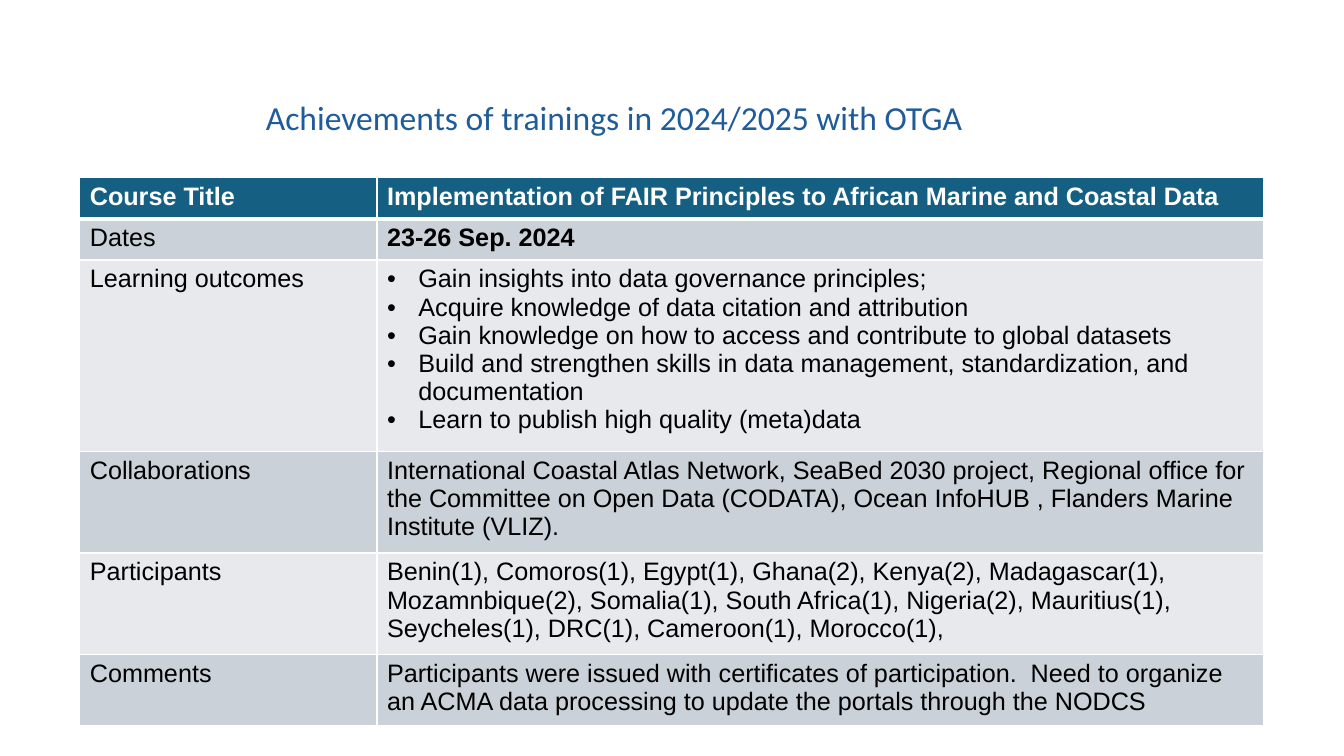
import dataclasses

import pptx
import pptx.dml.color
import pptx.oxml
import pptx.oxml.ns
import pptx.util
from pptx.util import Cm


@dataclasses.dataclass(frozen=True)
class Theme:
    heading: str = "1F5C99"
    header_fill: str = "156082"
    header_text: str = "FFFFFF"
    body_text: str = "000000"
    bands: tuple = ("E7E9EC", "CAD1D8")
    border: str = "FFFFFF"
    heading_font: str = "Calibri"
    table_font: str = "Arial"
    heading_size: int = 24
    table_size: int = 18
    thin: int = 1
    thick: int = 3


THEME = Theme()
HEADING = "Achievements of trainings in 2024/2025 with OTGA"
OUTCOMES = [
    "Gain insights into data governance principles;",
    "Acquire knowledge of data citation and attribution",
    "Gain knowledge on how to access and contribute to global datasets",
    "Build and strengthen skills in data management, standardization, and documentation",
    "Learn to publish high quality (meta)data",
]
COURSE = [
    ("Course Title", "Implementation of FAIR Principles to African Marine and Coastal Data", 1.04),
    ("Dates", "23-26 Sep. 2024", 1.04),
    ("Learning outcomes", OUTCOMES, 4.82),
    ("Collaborations",
     "International Coastal Atlas Network, SeaBed 2030 project, Regional office for "
     "the Committee on Open Data (CODATA), Ocean InfoHUB , Flanders Marine "
     "Institute (VLIZ).", 2.56),
    ("Participants",
     "Benin(1), Comoros(1), Egypt(1), Ghana(2), Kenya(2), Madagascar(1), "
     "Mozamnbique(2), Somalia(1), South Africa(1), Nigeria(2), Mauritius(1), "
     "Seycheles(1), DRC(1), Cameroon(1), Morocco(1),", 2.56),
    ("Comments",
     "Participants were issued with certificates of participation.  Need to organize "
     "an ACMA data processing to update the portals through the NODCS", 1.75),
]
COLUMN_WIDTHS = (7.49, 22.35)


def rgb(value):
    return pptx.dml.color.RGBColor.from_string(value)


def style_runs(paragraph, font_name, size, color, bold=False):
    for run in paragraph.runs:
        run.font.name = font_name
        run.font.size = pptx.util.Pt(size)
        run.font.color.rgb = rgb(color)
        run.font.bold = bold


def add_bullet(paragraph):
    properties = paragraph._p.get_or_add_pPr()
    properties.set("marL", str(Cm(0.79)))
    properties.set("indent", str(Cm(-0.79)))
    namespace = pptx.oxml.ns.nsdecls("a")
    properties.append(pptx.oxml.parse_xml(f'<a:buFont {namespace} typeface="{THEME.table_font}"/>'))
    properties.append(pptx.oxml.parse_xml(f'<a:buChar {namespace} char="•"/>'))


def set_borders(cell, top, bottom):
    properties = cell._tc.get_or_add_tcPr()
    widths = {"L": THEME.thin, "R": THEME.thin, "T": top, "B": bottom}
    for side, width in widths.items():
        properties.append(pptx.oxml.parse_xml(
            f'<a:ln{side} {pptx.oxml.ns.nsdecls("a")} w="{pptx.util.Pt(width)}">'
            f'<a:solidFill><a:srgbClr val="{THEME.border}"/></a:solidFill></a:ln{side}>'
        ))


def fill_cell(cell, content, row, bold):
    is_header = row == 0
    set_borders(
        cell,
        THEME.thick if row == 1 else THEME.thin,
        THEME.thick if is_header else THEME.thin,
    )
    cell.fill.solid()
    cell.fill.fore_color.rgb = rgb(THEME.header_fill if is_header else THEME.bands[row % 2])
    is_list = isinstance(content, list)
    cell.text_frame.text = "\n".join(content) if is_list else content
    for paragraph in cell.text_frame.paragraphs:
        if is_list:
            add_bullet(paragraph)
        color = THEME.header_text if is_header else THEME.body_text
        style_runs(paragraph, THEME.table_font, THEME.table_size, color, bold)


def add_heading(slide):
    heading = slide.shapes.add_textbox(Cm(6.45), Cm(2.31), Cm(20.93), Cm(1.27))
    heading.text_frame.word_wrap = True
    heading.text_frame.text = HEADING
    style_runs(heading.text_frame.paragraphs[0], THEME.heading_font, THEME.heading_size, THEME.heading)


def add_course_table(slide):
    total_height = sum(height for _, _, height in COURSE)
    course = slide.shapes.add_table(
        len(COURSE), len(COLUMN_WIDTHS),
        Cm(2.01), Cm(4.47), Cm(sum(COLUMN_WIDTHS)), Cm(total_height),
    ).table
    for column, width in zip(course.columns, COLUMN_WIDTHS):
        column.width = Cm(width)
    for row, (label, detail, height) in enumerate(COURSE):
        course.rows[row].height = Cm(height)
        fill_cell(course.cell(row, 0), label, row, bold=row == 0)
        fill_cell(course.cell(row, 1), detail, row, bold=row <= 1)


def main():
    presentation = pptx.Presentation()
    presentation.slide_width = Cm(33.87)
    presentation.slide_height = Cm(19.05)
    slide = presentation.slides.add_slide(presentation.slide_layouts[6])
    add_heading(slide)
    add_course_table(slide)
    presentation.save("out.pptx")


if __name__ == "__main__":
    main()
